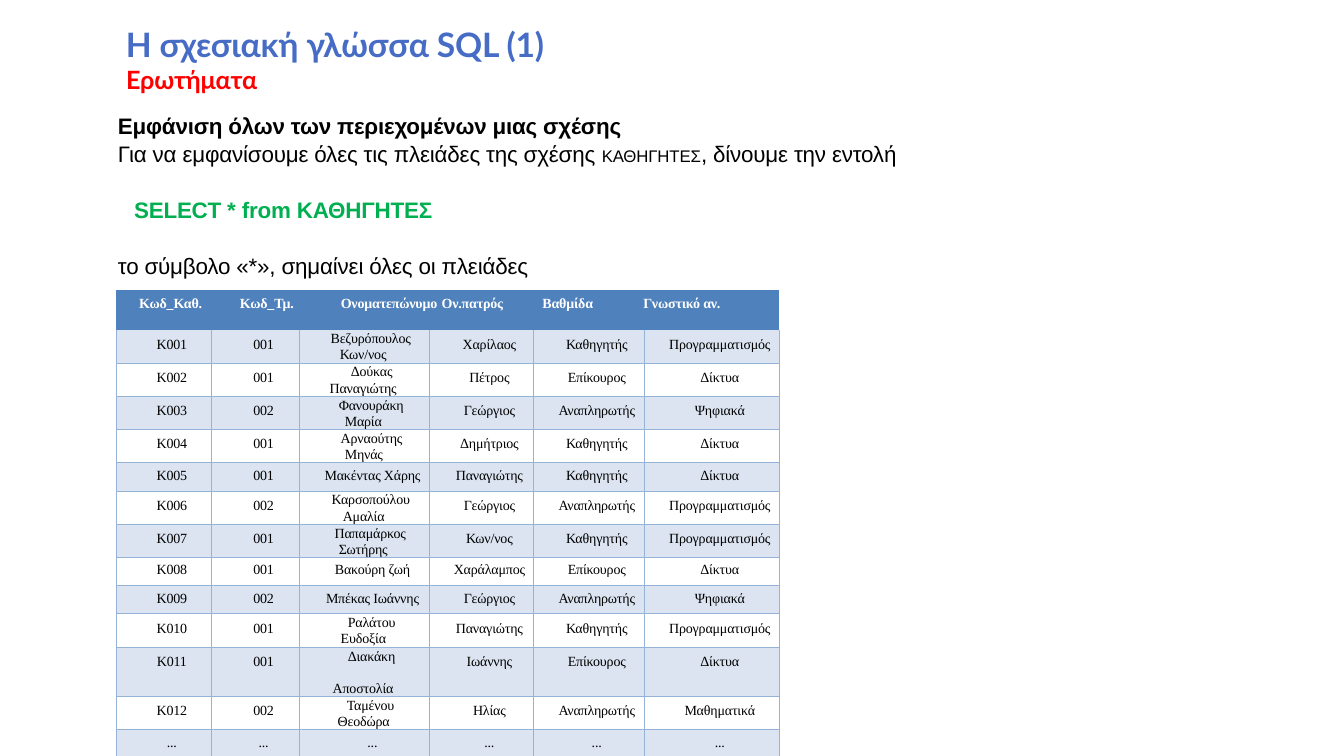
from lxml.etree import SubElement
from pptx import Presentation
from pptx.dml.color import RGBColor
from pptx.enum.text import PP_ALIGN
from pptx.oxml.ns import qn
from pptx.util import Inches, Pt

BLUE = RGBColor(0x46, 0x6C, 0xC6)
RED = RGBColor(0xFF, 0x00, 0x00)
GREEN = RGBColor(0x00, 0xAF, 0x50)
BLACK = RGBColor(0x00, 0x00, 0x00)
WHITE = RGBColor(0xFF, 0xFF, 0xFF)
HEADER_FILL = RGBColor(0x4F, 0x81, 0xBC)
BAND_FILL = RGBColor(0xDB, 0xE4, 0xF0)
GRID = RGBColor(0x94, 0xB3, 0xD6)
NO_STYLE = "{2D5ABB26-0587-4C30-8999-92F81FD0307C}"

COLUMN_WIDTHS = [0.95, 0.87, 1.29, 1.03, 1.1, 1.34]
HEADER_TABS = [1.19, 2.05, 3.39, 4.51, 5.59]
HEADER = "Κωδ_Καθ.\tΚωδ_Τμ.\tΟνοματεπώνυμο\tΟν.πατρός\tΒαθμίδα\tΓνωστικό αν."
HEADER_HEIGHT, TALL, SHORT, TALLEST = 0.39, 0.33, 0.28, 0.48

# Each row: height, (left margin, first-line indent) of a name on two lines, values
PROFESSORS = [
    (TALL, (0.4, -0.09), "Κ001|001|Βεζυρόπουλος Κων/νος|Χαρίλαος|Καθηγητής|Προγραμματισμός"),
    (TALL, (0.3, 0.21), "Κ002|001|Δούκας Παναγιώτης|Πέτρος|Επίκουρος|Δίκτυα"),
    (TALL, (0.45, -0.06), "Κ003|002|Φανουράκη Μαρία|Γεώργιος|Αναπληρωτής|Ψηφιακά"),
    (TALL, (0.45, -0.04), "Κ004|001|Αρναούτης Μηνάς|Δημήτριος|Καθηγητής|Δίκτυα"),
    (SHORT, None, "Κ005|001|Μακέντας Χάρης|Παναγιώτης|Καθηγητής|Δίκτυα"),
    (TALL, (0.43, -0.11), "Κ006|002|Καρσοπούλου Αμαλία|Γεώργιος|Αναπληρωτής|Προγραμματισμός"),
    (TALL, (0.39, -0.04), "Κ007|001|Παπαμάρκος Σωτήρης|Κων/νος|Καθηγητής|Προγραμματισμός"),
    (SHORT, None, "Κ008|001|Βακούρη ζωή|Χαράλαμπος|Επίκουρος|Δίκτυα"),
    (SHORT, None, "Κ009|002|Μπέκας Ιωάννης|Γεώργιος|Αναπληρωτής|Ψηφιακά"),
    (TALL, (0.41, 0.07), "Κ010|001|Ραλάτου Ευδοξία|Παναγιώτης|Καθηγητής|Προγραμματισμός"),
    (TALLEST, (0.33, 0.15), "Κ011|001|Διακάκη\nΑποστολία|Ιωάννης|Επίκουρος|Δίκτυα"),
    (TALL, (0.38, 0.09), "Κ012|002|Ταμένου Θεοδώρα|Ηλίας|Αναπληρωτής|Μαθηματικά"),
    (SHORT, None, "...|...|...|...|...|..."),
]


def style_run(run, font, size, color, bold=False):
    run.font.name, run.font.size, run.font.bold = font, Pt(size), bold
    run.font.color.rgb = color
    run._r.get_or_add_rPr().set("spc", "-10")


def indent(paragraph, left, first_line=0):
    properties = paragraph._p.get_or_add_pPr()
    properties.set("marL", str(Inches(left)))
    properties.set("indent", str(Inches(first_line)))


def add_text_box(slide, left, top, width, height, lines):
    """Add lines given as (indent, space before, [(text, font, size, colour, bold)])."""
    frame = slide.shapes.add_textbox(
        Inches(left), Inches(top), Inches(width), Inches(height)).text_frame
    frame.word_wrap = True
    frame.margin_left = frame.margin_right = frame.margin_bottom = 0
    frame.margin_top = Inches(0.01)
    for index, (left_indent, space_before, pieces) in enumerate(lines):
        line = frame.add_paragraph() if index else frame.paragraphs[0]
        indent(line, left_indent)
        if index:
            line.space_before = Pt(space_before)
        for text, *style in pieces:
            run = line.add_run()
            run.text = text
            style_run(run, *style)


def fill_cell(cell, text, color, top, bold=False):
    cell.margin_left = cell.margin_right = cell.margin_bottom = 0
    cell.margin_top = Inches(top)
    cell.text_frame.text = text
    for paragraph in cell.text_frame.paragraphs:
        for run in paragraph.runs:
            style_run(run, "Times New Roman", 10, color, bold)


def paint_cell(cell, fill, sides):
    properties = cell._tc.get_or_add_tcPr()
    for side in sides:
        line = SubElement(properties, qn(f"a:ln{side}"), w=str(Pt(0.5)))
        solid = SubElement(line, qn("a:solidFill"))
        SubElement(solid, qn("a:srgbClr"), val=str(GRID))
    if fill is None:
        cell.fill.background()
    else:
        cell.fill.solid()
        cell.fill.fore_color.rgb = fill


def set_two_line_name(cell, left, first_line):
    for index, paragraph in enumerate(cell.text_frame.paragraphs):
        indent(paragraph, left, 0 if index else first_line)
        paragraph.line_spacing = Pt(11.5)
        if index:
            paragraph.space_before = Pt(11.5)


def add_header(table):
    header = table.cell(0, 0)
    header.merge(table.cell(0, len(COLUMN_WIDTHS) - 1))
    table.rows[0].height = Inches(HEADER_HEIGHT)
    fill_cell(header, HEADER, WHITE, 0.06, bold=True)
    titles = header.text_frame.paragraphs[0]
    indent(titles, 0.23)
    tabs = SubElement(titles._p.get_or_add_pPr(), qn("a:tabLst"))
    for position in HEADER_TABS:
        SubElement(tabs, qn("a:tab"), pos=str(Inches(position)), algn="l")
    paint_cell(header, HEADER_FILL, "")


def add_professors(slide):
    height = HEADER_HEIGHT + sum(row[0] for row in PROFESSORS)
    table = slide.shapes.add_table(
        len(PROFESSORS) + 1, len(COLUMN_WIDTHS), Inches(1.15), Inches(2.88),
        Inches(sum(COLUMN_WIDTHS)), Inches(height)).table
    table._tbl.tblPr.find(qn("a:tableStyleId")).text = NO_STYLE
    for column, width in zip(table.columns, COLUMN_WIDTHS):
        column.width = Inches(width)
    add_header(table)
    for number, (row_height, name_indent, values) in enumerate(PROFESSORS, 1):
        table.rows[number].height = Inches(row_height)
        for column, value in enumerate(values.split("|")):
            cell = table.cell(number, column)
            if column == 2 and name_indent:
                fill_cell(cell, value, BLACK, 0.01)
                set_two_line_name(cell, *name_indent)
            else:
                fill_cell(cell, value, BLACK, 0.07 if name_indent else 0.05)
                indent(cell.text_frame.paragraphs[0], 0.16)
                cell.text_frame.paragraphs[0].alignment = PP_ALIGN.CENTER
            paint_cell(cell, BAND_FILL if number % 2 else None,
                       "LRB" if number == 1 else "LRTB")


def main():
    presentation = Presentation()
    presentation.slide_width, presentation.slide_height = Inches(13.33), Inches(7.5)
    slide = presentation.slides.add_slide(presentation.slide_layouts[6])
    add_text_box(slide, 1.24, 0.23, 4.67, 0.43, [
        (0.01, 0, [("Η σχεσιακή γλώσσα SQL (1)", "Lato", 24, BLUE, True)])])
    add_text_box(slide, 1.16, 0.63, 7.89, 2.1, [
        (0.09, 0, [("Ερωτήματα", "Lato", 18, RED, True)]),
        (0.01, 12.4, [("Εμφάνιση όλων των περιεχομένων μιας σχέσης", "Arial", 16, BLACK, True)]),
        (0.01, 1, [
            ("Για να εμφανίσουμε όλες τις πλειάδες της σχέσης ", "Arial", 16, BLACK),
            ("ΚΑΘΗΓΗΤΕΣ", "Arial", 12, BLACK),
            (", δίνουμε την εντολή", "Arial", 16, BLACK)]),
        (0.17, 20.8, [("SELECT * from ΚΑΘΗΓΗΤΕΣ", "Arial", 16, GREEN, True)]),
        (0.01, 20.6, [("το σύμβολο «*», σημαίνει όλες οι πλειάδες", "Arial", 16, BLACK)])])
    add_professors(slide)
    presentation.save("out.pptx")


if __name__ == "__main__":
    main()
